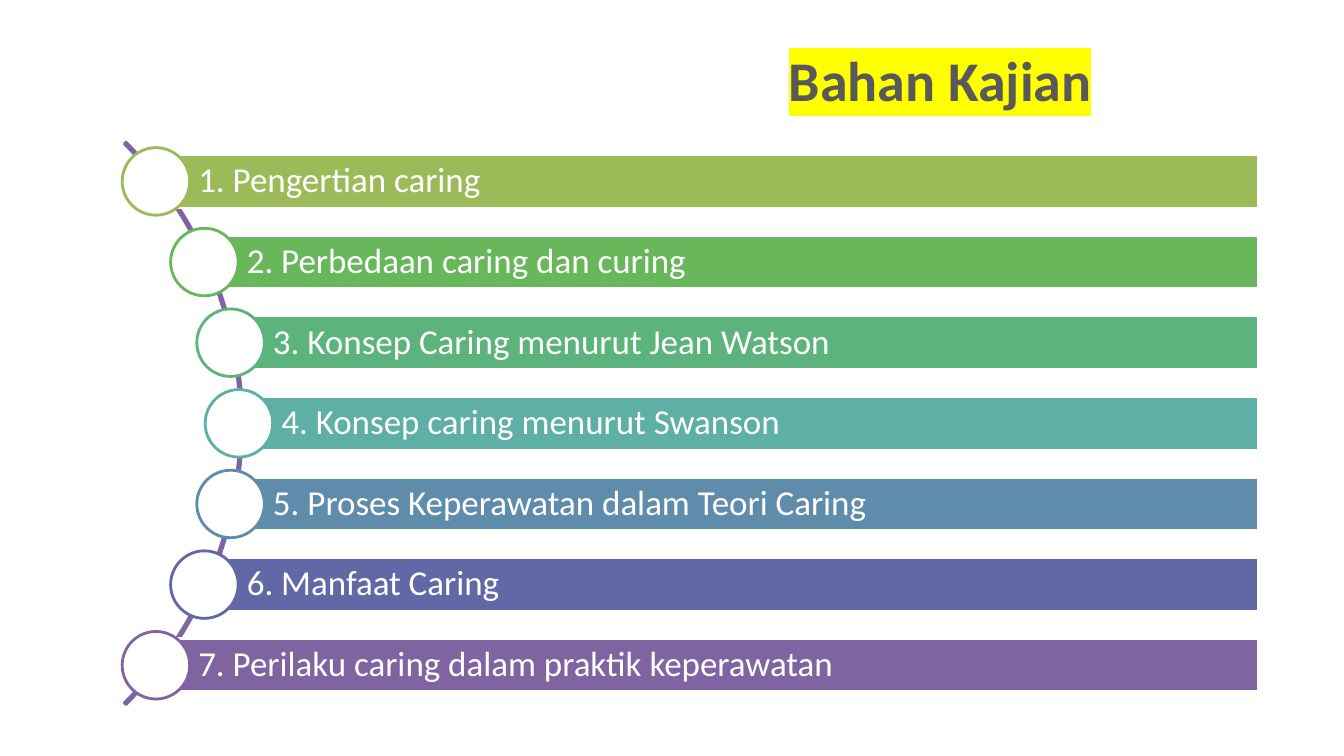
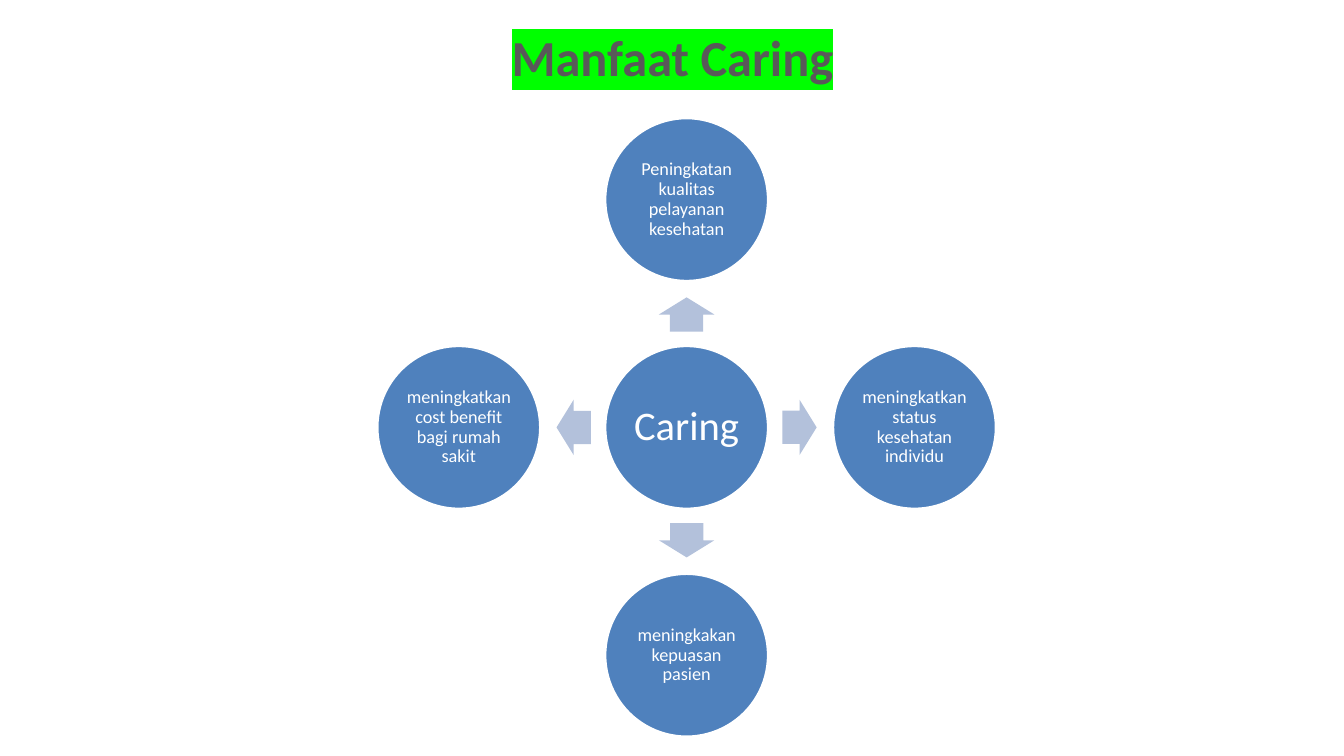
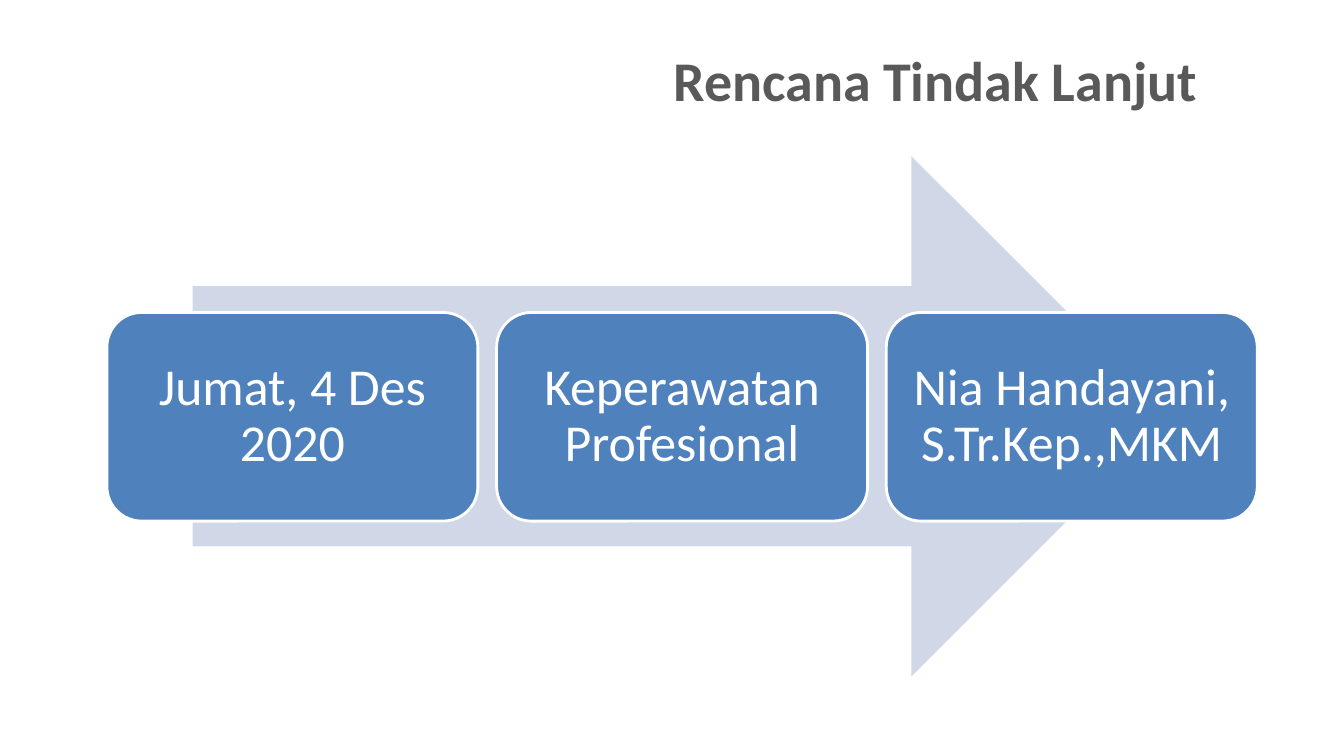
from dataclasses import dataclass
from math import cos, radians, sin, sqrt
from typing import Optional

from pptx import Presentation
from pptx.dml.color import RGBColor
from pptx.enum.shapes import MSO_SHAPE
from pptx.enum.text import MSO_ANCHOR, MSO_AUTO_SIZE, PP_ALIGN
from pptx.oxml import parse_xml
from pptx.oxml.ns import nsdecls, qn
from pptx.presentation import Presentation as PresentationType
from pptx.shapes.autoshape import Shape
from pptx.slide import Slide
from pptx.text.text import TextFrame
from pptx.util import Inches, Pt

FONT = "Calibri"
COLORS = {
    "white": "FFFFFF",
    "title": "595959",
    "yellow": "FFFF00",
    "green": "00FF00",
    "blue": "4F81BD",
    "small_arrow": "B3C1DB",
    "large_arrow": "D0D8E8",
    "arc": "8064A2",
}


@dataclass(frozen=True)
class Box:
    left: float
    top: float
    width: float
    height: float

    @classmethod
    def centered(cls, x: float, y: float, width: float, height: float) -> "Box":
        return cls(x - width / 2, y - height / 2, width, height)


@dataclass(frozen=True)
class Title:
    text: str
    box: Box
    size: int = 40
    align: PP_ALIGN = PP_ALIGN.CENTER
    highlight: Optional[str] = None


@dataclass(frozen=True)
class Topic:
    text: str
    color: str


@dataclass(frozen=True)
class Benefit:
    text: str
    angle: int


TOPICS = [
    Topic("1. Pengertian caring", "9BBB59"),
    Topic("2. Perbedaan caring dan curing", "69B75B"),
    Topic("3. Konsep Caring menurut Jean Watson", "5CB37C"),
    Topic("4. Konsep caring menurut Swanson", "5EAFA6"),
    Topic("5. Proses Keperawatan dalam Teori Caring", "608CAB"),
    Topic("6. Manfaat Caring", "6267A6"),
    Topic("7. Perilaku caring dalam praktik keperawatan", "8064A2"),
]
BENEFITS = [
    Benefit("Peningkatan kualitas pelayanan kesehatan", 270),
    Benefit("meningkatkan status kesehatan individu", 0),
    Benefit("meningkakan kepuasan pasien", 90),
    Benefit("meningkatkan cost benefit bagi rumah sakit", 180),
]
PLAN = ["Jumat, 4 Des 2020", "Keperawatan Profesional", "Nia Handayani, S.Tr.Kep.,MKM"]


def rgb(color: str) -> RGBColor:
    return RGBColor.from_string(COLORS.get(color, color))


def write_text(frame: TextFrame, text: str, size: int, color: str, align: PP_ALIGN,
               bold: bool = False, highlight: Optional[str] = None) -> None:
    paragraph = frame.paragraphs[0]
    paragraph.alignment = align
    run = paragraph.add_run()
    run.text = text
    run.font.size = Pt(size)
    run.font.bold = bold
    run.font.color.rgb = rgb(color)
    if highlight:
        mark = parse_xml(f'<a:highlight {nsdecls("a")}>'
                         f'<a:srgbClr val="{COLORS[highlight]}"/></a:highlight>')
        run.font._element.find(qn("a:solidFill")).addnext(mark)
    run.font.name = FONT


def add_titled_slide(presentation: PresentationType, title: Title) -> Slide:
    slide = presentation.slides.add_slide(presentation.slide_layouts[5])
    shape = slide.shapes.title
    box = title.box
    shape.left, shape.top = Inches(box.left), Inches(box.top)
    shape.width, shape.height = Inches(box.width), Inches(box.height)
    frame = shape.text_frame
    frame.auto_size = MSO_AUTO_SIZE.NONE
    frame.vertical_anchor = MSO_ANCHOR.TOP
    frame.margin_top = Inches(0.08)
    write_text(frame, title.text, title.size, "title", title.align, True, title.highlight)
    return slide


def add_figure(slide: Slide, kind: MSO_SHAPE, box: Box, fill: Optional[str],
               line: Optional[str] = "white") -> Shape:
    shape = slide.shapes.add_shape(kind, Inches(box.left), Inches(box.top),
                                   Inches(box.width), Inches(box.height))
    shape.shadow.inherit = False
    if fill:
        shape.fill.solid()
        shape.fill.fore_color.rgb = rgb(fill)
    else:
        shape.fill.background()
    if line:
        shape.line.color.rgb = rgb(line)
        shape.line.width = Pt(2)
    else:
        shape.line.fill.background()
    return shape


def add_label(shape: Shape, text: str, size: int, margin: float,
              align: PP_ALIGN = PP_ALIGN.CENTER) -> None:
    frame = shape.text_frame
    frame.word_wrap = True
    frame.vertical_anchor = MSO_ANCHOR.MIDDLE
    frame.margin_left = frame.margin_right = Inches(margin)
    frame.margin_top = frame.margin_bottom = Inches(margin)
    write_text(frame, text, size, "white", align)
    frame.paragraphs[0].line_spacing = 0.9


def build_topics(presentation: PresentationType) -> None:
    slide = add_titled_slide(presentation, Title(
        "Bahan Kajian", Box(6.4, 0.37, 5.85, 0.66), highlight="yellow"))
    center_x, center_y, diameter = -1.54, 4.2, 7.89
    orbit, pitch, right = 3.91, 0.8, 12.48
    arc = add_figure(slide, MSO_SHAPE.BLOCK_ARC,
                     Box.centered(center_x, center_y, diameter, diameter), None, "arc")
    for index, value in enumerate((189, 27, 0.003)):
        arc.adjustments[index] = value
    for row, topic in enumerate(TOPICS):
        offset = (row - (len(TOPICS) - 1) / 2) * pitch
        x, y = center_x + sqrt(orbit**2 - offset**2), center_y + offset
        bar = add_figure(slide, MSO_SHAPE.RECTANGLE,
                         Box(x, y - 0.265, right - x, 0.53), topic.color)
        add_label(bar, topic.text, 25, 0.07, PP_ALIGN.LEFT)
        bar.text_frame.margin_left = Inches(0.42)
        add_figure(slide, MSO_SHAPE.OVAL, Box.centered(x, y, 0.67, 0.67),
                   "white", topic.color)


def build_benefits(presentation: PresentationType) -> None:
    slide = add_titled_slide(presentation, Title(
        "Manfaat Caring", Box(3.29, 0.18, 6.76, 0.67), 36, highlight="green"))
    center_x, center_y, diameter = 6.81, 4.24, 1.62
    circle_distance, arrow_distance = 2.26, 1.12

    def add_circle(x: float, y: float, text: str, size: int, margin: float) -> None:
        circle = add_figure(slide, MSO_SHAPE.OVAL,
                            Box.centered(x, y, diameter, diameter), "blue")
        add_label(circle, text, size, margin)

    add_circle(center_x, center_y, "Caring", 29, 0.04)
    for benefit in BENEFITS:
        across, down = cos(radians(benefit.angle)), sin(radians(benefit.angle))
        arrow = add_figure(slide, MSO_SHAPE.RIGHT_ARROW,
                           Box.centered(center_x + arrow_distance * across,
                                        center_y + arrow_distance * down, 0.34, 0.55),
                           "small_arrow", None)
        arrow.adjustments[0] = 0.6
        arrow.rotation = benefit.angle
        add_circle(center_x + circle_distance * across,
                   center_y + circle_distance * down, benefit.text, 13, 0.02)


def build_plan(presentation: PresentationType) -> None:
    slide = add_titled_slide(presentation, Title(
        "Rencana Tindak Lanjut", Box(6.58, 0.37, 5.67, 0.74), align=PP_ALIGN.LEFT))
    add_figure(slide, MSO_SHAPE.RIGHT_ARROW, Box(1.91, 1.55, 9.71, 5.16),
               "large_arrow", None)
    left, right, width = 1.06, 12.47, 3.68
    pitch = (right - left - width) / (len(PLAN) - 1)
    for column, text in enumerate(PLAN):
        card = add_figure(slide, MSO_SHAPE.ROUNDED_RECTANGLE,
                          Box(left + column * pitch, 3.1, width, 2.07), "blue")
        add_label(card, text, 37, 0.15)


def main() -> None:
    presentation = Presentation()
    presentation.slide_width, presentation.slide_height = Inches(13.33), Inches(7.5)
    build_topics(presentation)
    build_benefits(presentation)
    build_plan(presentation)
    presentation.save("out.pptx")


if __name__ == "__main__":
    main()
